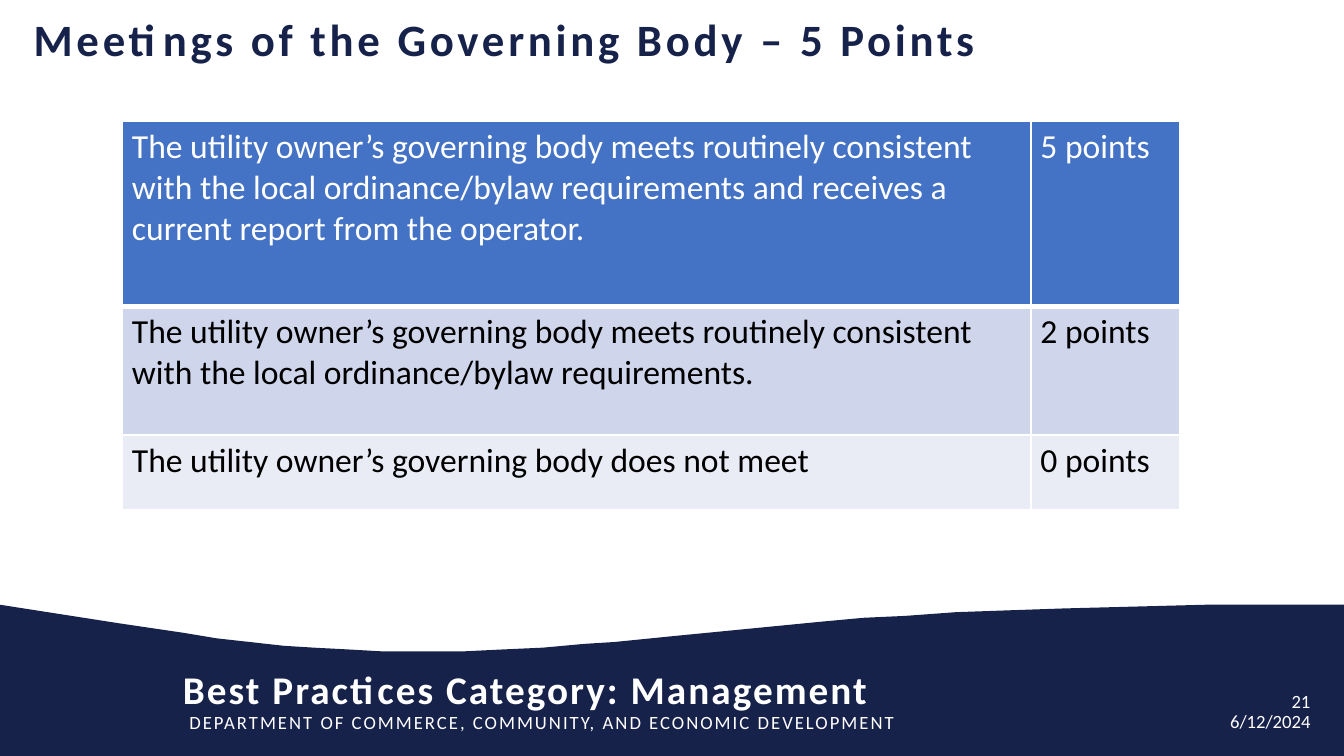
from lxml import etree
from pptx import Presentation
from pptx.dml.color import RGBColor
from pptx.enum import text
from pptx.oxml import ns
from pptx.util import Pt

NAVY = RGBColor(0x17, 0x22, 0x4B)
TITLE_NAVY = RGBColor(0x16, 0x22, 0x4A)
WHITE = RGBColor(0xFF, 0xFF, 0xFF)
BLACK = RGBColor(0, 0, 0)
HEADER_BLUE = RGBColor(0x44, 0x72, 0xC4)
BAND_DARK = RGBColor(0xCF, 0xD5, 0xEA)
BAND_LIGHT = RGBColor(0xE9, 0xEB, 0xF5)

SLIDE_WIDTH, SLIDE_HEIGHT = 720, 405
FONT = "Calibri"
WAVE_CREST = [
    (0, 0), (64, 10), (98, 15.4), (116, 18), (134, 20), (152, 21.8), (168, 23),
    (187, 24.2), (205, 25), (226, 25.3), (248, 25), (269, 24.2), (291, 23),
    (313, 21.3), (329, 20), (359, 17.1), (441, 9.2), (463, 7.4), (485, 5.7),
    (512, 4.2), (541, 2.8), (570, 1.8), (608, 0.8), (646, 0.2), (685, 0), (720, 0),
]
CRITERIA = [
    ("The utility owner’s governing body meets routinely consistent with the local "
     "ordinance/bylaw requirements and receives a current report from the operator.",
     "5 points", HEADER_BLUE, WHITE, 99.2),
    ("The utility owner’s governing body meets routinely consistent with the local "
     "ordinance/bylaw requirements.", "2 points", BAND_DARK, BLACK, 69),
    ("The utility owner’s governing body does not meet", "0 points", BAND_LIGHT, BLACK, 39.7),
]


def style_text(frame, size, color, bold=False, spacing=0):
    """Format every run of a text frame, with letter spacing in points."""
    for paragraph in frame.paragraphs:
        for run in paragraph.runs:
            run.font.name = FONT
            run.font.size = Pt(size)
            run.font.bold = bold
            run.font.color.rgb = color
            if spacing:
                run.font._element.set("spc", str(round(spacing * 100)))


def set_margins(owner, left, top, right, bottom):
    """Set the four inner margins of a frame or cell in points."""
    owner.margin_left, owner.margin_top = Pt(left), Pt(top)
    owner.margin_right, owner.margin_bottom = Pt(right), Pt(bottom)


def add_label(slide, box, words, size, bold=False, spacing=0, right=False, margins=(0, 0, 0, 0)):
    """Add one line of white text in the given box."""
    label = slide.shapes.add_textbox(*map(Pt, box))
    frame = label.text_frame
    frame.text = words
    frame.word_wrap = True
    set_margins(frame, *margins)
    if right:
        frame.paragraphs[0].alignment = text.PP_ALIGN.RIGHT
    style_text(frame, size, WHITE, bold, spacing)


def add_footer(slide, left, top, width, height):
    """Draw the navy wave with the category, department, page and date."""
    crest = [(left + x * width / SLIDE_WIDTH, top + y) for x, y in WAVE_CREST]
    base = [(left + width, top + height), (left, top + height)]
    builder = slide.shapes.build_freeform(*crest[0], scale=Pt(1))
    builder.add_line_segments(crest[1:] + base, close=True)
    wave = builder.convert_to_shape()
    wave.shadow.inherit = False
    wave.fill.solid()
    wave.fill.fore_color.rgb = NAVY
    wave.line.fill.background()

    add_label(slide, (left + 94.3, top + 53.3, 454.3, 19.4),
              "DEPARTMENT OF COMMERCE, COMMUNITY, AND ECONOMIC DEVELOPMENT",
              10, spacing=1.1, margins=(7.2, 3.6, 7.2, 3.6))
    add_label(slide, (left + 98, top + 32.4, 450.6, 25.2),
              "Best Practices Category: Management", 21, bold=True, spacing=1.1)
    right_edge = left + width - 18
    add_label(slide, (right_edge - 165.6, top + 45.4, 165.6, 12.2), "21", 10, right=True)
    add_label(slide, (right_edge - 60.5, top + 56.2, 60.5, 12.2), "6/12/2024", 10, right=True)


def add_title(slide, left, top, width, height):
    """Place and format the slide title."""
    title = slide.shapes.title
    title.left, title.top, title.width, title.height = map(Pt, (left, top, width, height))
    frame = title.text_frame
    frame.text = "Meetings of the Governing Body – 5 Points"
    frame.word_wrap = True
    frame.auto_size = text.MSO_AUTO_SIZE.NONE
    frame.vertical_anchor = text.MSO_ANCHOR.TOP
    set_margins(frame, 0, 0.7, 0, 0)
    heading = frame.paragraphs[0]
    heading.alignment = text.PP_ALIGN.LEFT
    heading.line_spacing = 1.0
    style_text(frame, 24, TITLE_NAVY, bold=True, spacing=2)


def set_borders(cell, top, bottom):
    """Give a cell white borders, with the top and bottom widths in points."""
    properties = cell._tc.get_or_add_tcPr()
    for side, weight in (("L", 1), ("R", 1), ("T", top), ("B", bottom)):
        edge = etree.SubElement(properties, ns.qn(f"a:ln{side}"), w=str(Pt(weight)))
        fill = etree.SubElement(edge, ns.qn("a:solidFill"))
        etree.SubElement(fill, ns.qn("a:srgbClr"), val=str(WHITE))


def add_criteria(slide, left, top, width, height):
    """Build the table of scoring criteria and points."""
    points_width = 79.9
    frame = slide.shapes.add_table(len(CRITERIA), 2, *map(Pt, (left, top, width, height)))
    table = frame.table
    table.columns[0].width = Pt(width - points_width)
    table.columns[1].width = Pt(points_width)
    for index, (criterion, points, band, ink, row_height) in enumerate(CRITERIA):
        table.rows[index].height = Pt(row_height)
        for cell, words in zip(table.rows[index].cells, (criterion, points)):
            cell.text = words
            set_margins(cell, 5.2, 2.6, 5.2, 2.6)
            set_borders(cell, 3 if index == 1 else 1, 3 if index == 0 else 1)
            cell.fill.solid()
            cell.fill.fore_color.rgb = band
            style_text(cell.text_frame, 18, ink)


def main():
    """Build the slide and save it."""
    deck = Presentation()
    deck.slide_width, deck.slide_height = Pt(SLIDE_WIDTH), Pt(SLIDE_HEIGHT)
    slide = deck.slides.add_slide(deck.slide_layouts[5])
    add_footer(slide, 0, 324, SLIDE_WIDTH, SLIDE_HEIGHT - 324)
    add_title(slide, 18, 5.8, 508.3, 59)
    add_criteria(slide, 65.5, 65, 566.6, 207.9)
    deck.save("out.pptx")


if __name__ == "__main__":
    main()
